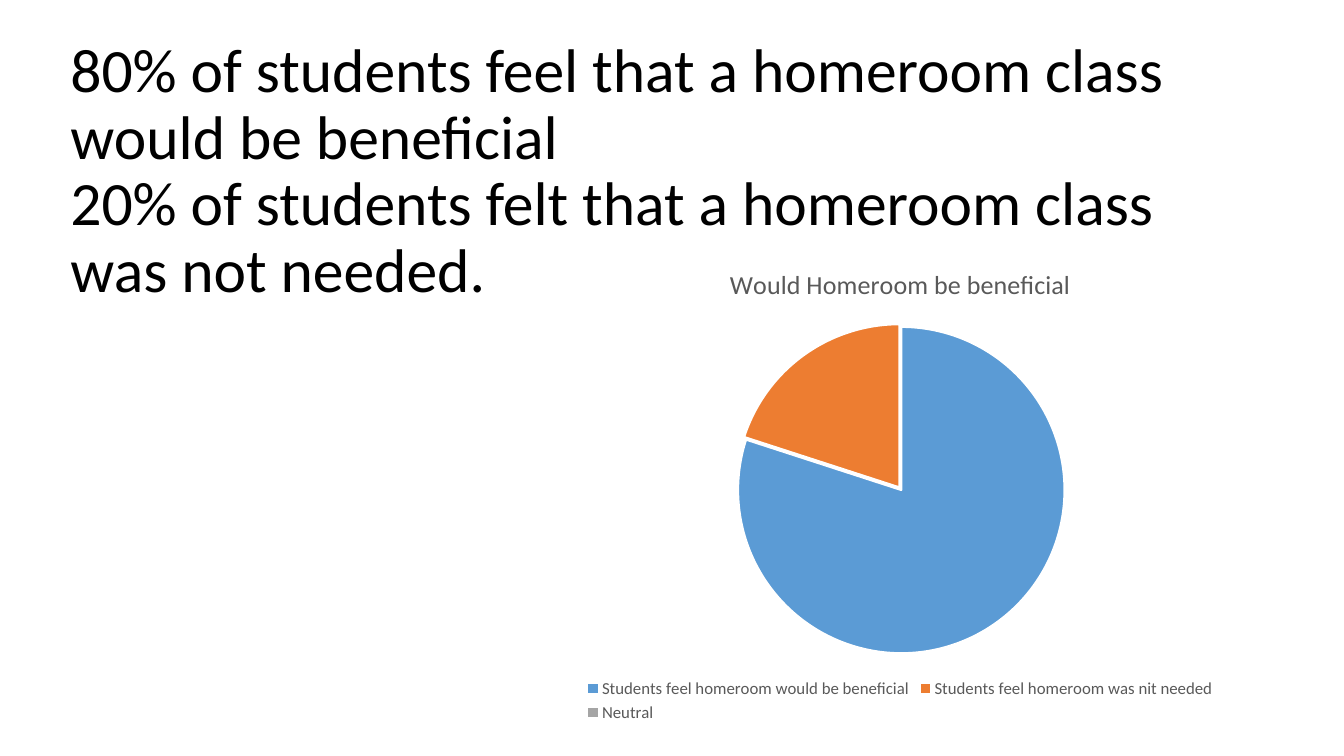
from typing import NamedTuple

from lxml import etree
from pptx import Presentation
from pptx.chart.data import CategoryChartData
from pptx.dml.color import RGBColor
from pptx.enum.chart import XL_CHART_TYPE as ChartType, XL_LEGEND_POSITION as LegendPosition
from pptx.enum.text import MSO_ANCHOR as Anchor
from pptx.oxml.ns import qn
from pptx.slide import Slide
from pptx.util import Inches, Pt

FONT = "Calibri"
BLACK, GREY, WHITE = "000000", "595959", "FFFFFF"
QUESTION = "Would Homeroom be beneficial"
FINDINGS = (
    "80% of students feel that a homeroom class would be beneficial\v"
    "20% of students felt that a homeroom class was not needed."
)


class Answer(NamedTuple):
    label: str
    percent: int
    color: str


ANSWERS = [
    Answer("Students feel homeroom would be beneficial", 80, "5B9BD5"),
    Answer("Students feel homeroom was nit needed", 20, "ED7D31"),
    Answer("Neutral", 0, "A5A5A5"),
]


def rgb(color: str) -> RGBColor:
    return RGBColor.from_string(color)


def style_font(font, size: float, color: str) -> None:
    font.name = FONT
    font.size = Pt(size)
    font.bold = False
    font.color.rgb = rgb(color)


def add_findings(slide: Slide) -> None:
    box = slide.shapes.add_textbox(Inches(0.6), Inches(0.25), Inches(11.5), Inches(3.58))
    frame = box.text_frame
    frame.word_wrap = True
    frame.vertical_anchor = Anchor.TOP
    frame.margin_top = Inches(0.14)
    findings = frame.paragraphs[0]
    findings.text = FINDINGS
    findings.line_spacing = 0.9
    style_font(findings.font, 44, BLACK)


def explode(series, percent: int) -> None:
    """Move all slices of a pie series away from its centre."""
    explosion = etree.Element(qn("c:explosion"), val=str(percent))
    series._element.find(qn("c:dPt")).addprevious(explosion)


def add_answer_pie(slide: Slide) -> None:
    data = CategoryChartData()
    data.categories = [answer.label for answer in ANSWERS]
    data.add_series(QUESTION, [answer.percent for answer in ANSWERS])
    chart = slide.shapes.add_chart(
        ChartType.PIE, Inches(5.44), Inches(2.45), Inches(6.98), Inches(4.76), data
    ).chart
    style_font(chart.font, 10, BLACK)

    chart.has_title = True
    question = chart.chart_title.text_frame.paragraphs[0]
    question.text = QUESTION
    style_font(question.font, 18.6, GREY)
    chart.chart_title.include_in_layout = False

    chart.has_legend = True
    chart.legend.position = LegendPosition.BOTTOM
    chart.legend.include_in_layout = False
    style_font(chart.legend.font, 12, GREY)

    plot = chart.plots[0]
    plot.vary_by_categories = True
    votes = plot.series[0]
    for index, answer in enumerate(ANSWERS):
        part = votes.points[index].format
        part.fill.solid()
        part.fill.fore_color.rgb = rgb(answer.color)
        part.line.color.rgb = rgb(WHITE)
        part.line.width = Pt(1.5)
    explode(votes, 1)


def main() -> None:
    deck = Presentation()
    deck.slide_width, deck.slide_height = Inches(13.33), Inches(7.5)
    slide = deck.slides.add_slide(deck.slide_layouts[6])
    add_findings(slide)
    add_answer_pie(slide)
    deck.save("out.pptx")


if __name__ == "__main__":
    main()
